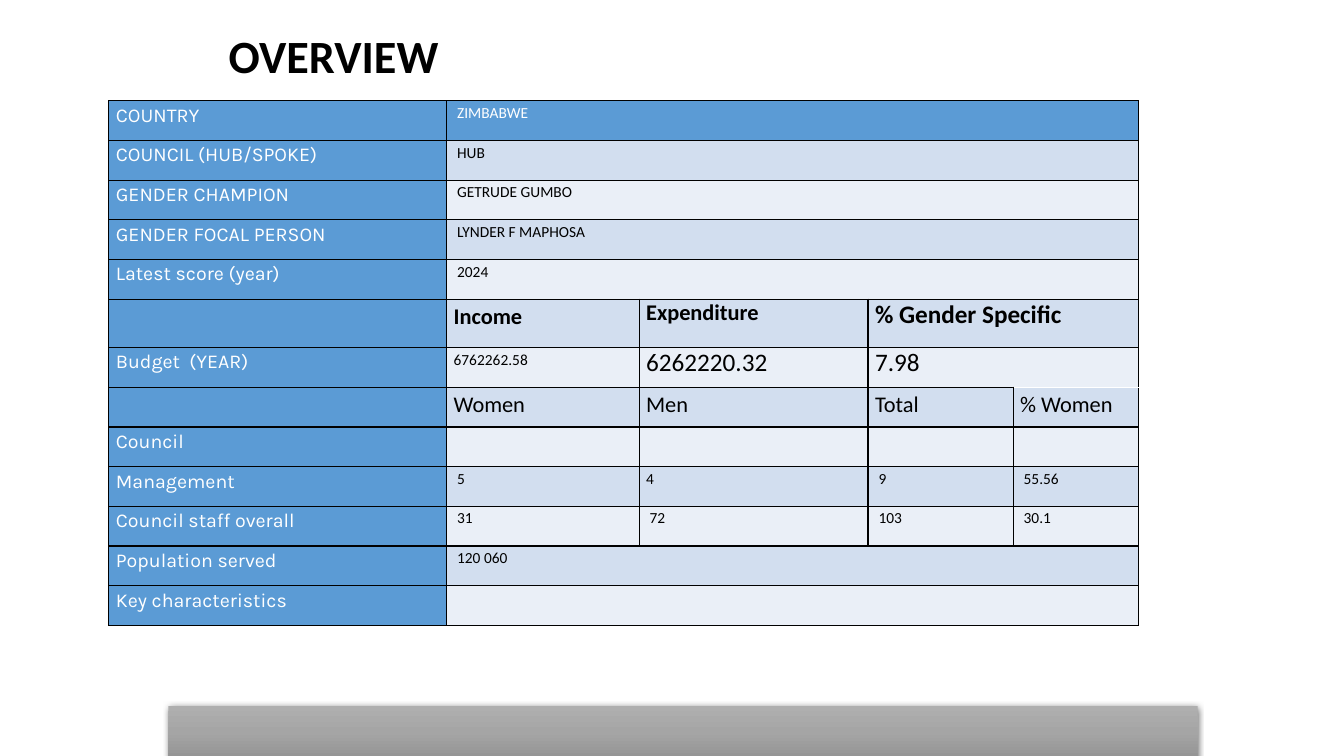
import copy

import lxml.etree
import pptx
import pptx.dml.color
import pptx.enum.shapes
import pptx.enum.text
import pptx.oxml
import pptx.oxml.ns
import pptx.util

RGBColor = pptx.dml.color.RGBColor
BLACK = RGBColor(0x00, 0x00, 0x00)
WHITE = RGBColor(0xFF, 0xFF, 0xFF)
BLUE = RGBColor(0x5B, 0x9B, 0xD5)
BANDS = (RGBColor(0xEA, 0xEF, 0xF7), RGBColor(0xD2, 0xDE, 0xEF))
BAR_GREYS = (RGBColor(0xAF, 0xAF, 0xAF), RGBColor(0xA5, 0xA5, 0xA5), RGBColor(0x93, 0x93, 0x93))

TITLE = dict(name="Calibri", size=33, bold=True, color=BLACK, spacing=0.9)
LABEL = dict(name="Karla", size=14, bold=False, color=WHITE, spacing=1.15)
VALUE = dict(name="Calibri", size=11, bold=False, color=BLACK, spacing=1.15)
COUNTRY = VALUE | dict(color=WHITE)
HEAD = VALUE | dict(size=16)
INCOME = HEAD | dict(bold=True)
EXPENDITURE = INCOME | dict(spacing=1.0)
GENDER = EXPENDITURE | dict(size=18)
AMOUNT = GENDER | dict(bold=False)

COLUMNS = (25.13, 14.33, 17.03, 10.8, 9.3)
ROW, TALL_ROW, BUDGET_HEAD = 5.25, 6.4, 5
OVERVIEW = (
    ("COUNTRY", [" ZIMBABWE"], [COUNTRY]),
    ("COUNCIL (HUB/SPOKE)", [" HUB"], [VALUE]),
    ("GENDER CHAMPION", [" GETRUDE GUMBO"], [VALUE]),
    ("GENDER FOCAL PERSON", [" LYNDER F MAPHOSA"], [VALUE]),
    ("Latest score (year)", [" 2024"], [VALUE]),
    ("", ["Income", "Expenditure", "% Gender Specific"], [INCOME, EXPENDITURE, GENDER]),
    ("Budget  (YEAR)", ["6762262.58", "6262220.32", "7.98"], [VALUE, AMOUNT, AMOUNT]),
    ("", ["Women", "Men", "Total", "% Women"], [HEAD] * 4),
    ("Council", [""] * 4, [VALUE] * 4),
    ("Management", [" 5", "4", " 9", " 55.56"], [VALUE] * 4),
    ("Council staff overall", [" 31", " 72", " 103", " 30.1"], [VALUE] * 4),
    ("Population served", [" 120 060"], [VALUE]),
    ("Key characteristics", [""], [VALUE]),
)


class Deck:
    """Slide builder on a grid of 100 columns by 100 rows."""

    def __init__(self):
        self.prs = pptx.Presentation()
        self.prs.slide_width = pptx.util.Inches(13.33)
        self.prs.slide_height = pptx.util.Inches(7.5)
        self.slide = self.prs.slides.add_slide(self.prs.slide_layouts[6])

    def x(self, columns):
        return int(self.prs.slide_width * columns / 100)

    def y(self, rows):
        return int(self.prs.slide_height * rows / 100)

    def box(self, left, top, width, height):
        return self.x(left), self.y(top), self.x(width), self.y(height)

    def fill_text(self, tf, text, style):
        p = tf.paragraphs[0]
        p.line_spacing = style["spacing"]
        if not text:
            return
        r = p.add_run()
        r.text = text
        values = dict(name=style["name"], size=pptx.util.Pt(style["size"]), bold=style["bold"])
        for key, value in values.items():
            setattr(r.font, key, value)
        r.font.color.rgb = style["color"]

    def text(self, place, text, style):
        tf = self.slide.shapes.add_textbox(*self.box(*place)).text_frame
        tf.word_wrap = True
        tf.vertical_anchor = pptx.enum.text.MSO_ANCHOR.MIDDLE
        self.fill_text(tf, text, style)

    def cell(self, cell, fill, top):
        margins = dict(margin_left=5, margin_right=5, margin_top=0, margin_bottom=0)
        for key, value in margins.items():
            setattr(cell, key, pptx.util.Pt(value))
        tcPr = cell._tc.get_or_add_tcPr()
        for side, color in zip("LRTB", (BLACK, BLACK, top, BLACK)):
            ln = lxml.etree.SubElement(tcPr, pptx.oxml.ns.qn(f"a:ln{side}"), w="12700")
            solid = lxml.etree.SubElement(ln, pptx.oxml.ns.qn("a:solidFill"))
            lxml.etree.SubElement(solid, pptx.oxml.ns.qn("a:srgbClr"), val=str(color))
        cell.fill.solid()
        cell.fill.fore_color.rgb = fill

    def table(self, left, top, rows):
        heights = [TALL_ROW if i == BUDGET_HEAD else ROW for i in range(len(rows))]
        place = self.box(left, top, sum(COLUMNS), sum(heights))
        table = self.slide.shapes.add_table(len(rows), len(COLUMNS), *place).table
        table.first_row = table.horz_banding = False
        for column, width in zip(table.columns, COLUMNS):
            column.width = self.x(width)
        last = len(COLUMNS) - 1
        for i, (label, values, styles) in enumerate(rows):
            table.rows[i].height = self.y(heights[i])
            for j in range(len(COLUMNS)):
                fill = BLUE if i == 0 or j == 0 else BANDS[i % 2]
                edge = WHITE if (i, j) == (BUDGET_HEAD + 2, last) else BLACK
                self.cell(table.cell(i, j), fill, edge)
            if len(values) < last:
                table.cell(i, len(values)).merge(table.cell(i, last))
            for j, (text, style) in enumerate(zip([label, *values], [LABEL, *styles])):
                self.fill_text(table.cell(i, j).text_frame, text, style)

    def bar(self, place, greys):
        sp = self.slide.shapes.add_shape(pptx.enum.shapes.MSO_SHAPE.RECTANGLE, *self.box(*place))
        sp.shadow.inherit = False
        sp.line.fill.background()
        sp.fill.gradient()
        sp.fill.gradient_angle = 270
        stops = sp._element.spPr.find(".//" + pptx.oxml.ns.qn("a:gsLst"))
        stops.insert(1, copy.deepcopy(stops[0]))
        for i, (stop, grey) in enumerate(zip(sp.fill.gradient_stops, greys)):
            stop.position = i / 2
            stop.color.rgb = grey
        effects = sp._element.spPr.find(pptx.oxml.ns.qn("a:effectLst"))
        effects.append(pptx.oxml.parse_xml(
            f'<a:outerShdw {pptx.oxml.ns.nsdecls("a")} blurRad="57150" dist="19050" '
            'dir="5400000" algn="ctr" rotWithShape="0"><a:srgbClr val="000000">'
            '<a:alpha val="63000"/></a:srgbClr></a:outerShdw>'))


def main():
    deck = Deck()
    deck.text((16.28, 2.27, 67.5, 11.07), "OVERVIEW", TITLE)
    deck.table(8.1, 13.33, OVERVIEW)
    deck.bar((12.53, 93.33, 76.59, 7.07), BAR_GREYS)
    deck.prs.save("out.pptx")


if __name__ == "__main__":
    main()
